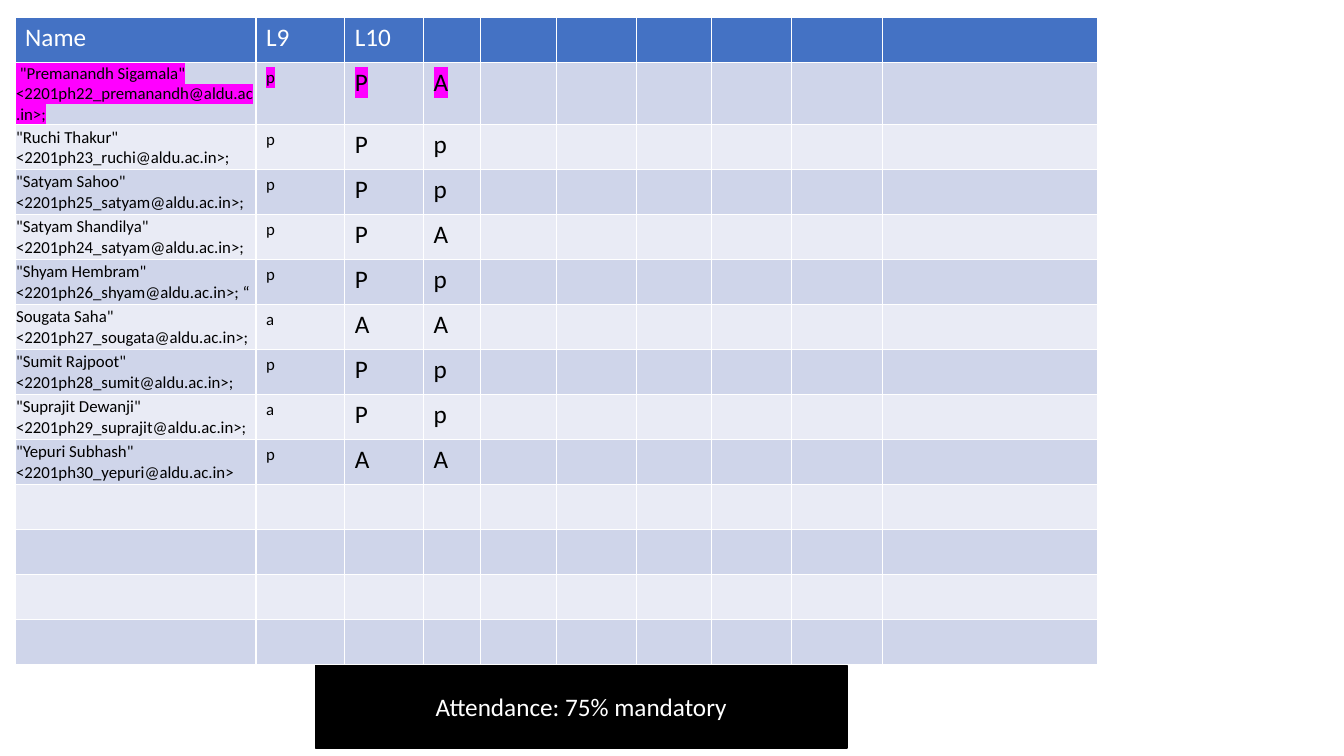
from lxml import etree
from pptx import Presentation
from pptx.dml.color import RGBColor
from pptx.enum.shapes import MSO_SHAPE
from pptx.enum.text import MSO_ANCHOR, PP_ALIGN
from pptx.oxml.ns import qn
from pptx.util import Inches, Pt

HEADINGS = ["Name", "L9", "L10"]
STUDENTS = [
    (' "Premanandh Sigamala" <2201ph22_premanandh@aldu.ac.in>;', "p", "P", "A"),
    ('"Ruchi Thakur" <2201ph23_ruchi@aldu.ac.in>;', "p", "P", "p"),
    ('"Satyam Sahoo" <2201ph25_satyam@aldu.ac.in>;', "p", "P", "p"),
    ('"Satyam Shandilya" <2201ph24_satyam@aldu.ac.in>;', "p", "P", "A"),
    ('"Shyam Hembram" <2201ph26_shyam@aldu.ac.in>; “', "p", "P", "p"),
    ('Sougata Saha" <2201ph27_sougata@aldu.ac.in>;', "a", "A", "A"),
    ('"Sumit Rajpoot" <2201ph28_sumit@aldu.ac.in>;', "p", "P", "p"),
    ('"Suprajit Dewanji" <2201ph29_suprajit@aldu.ac.in>;', "a", "P", "p"),
    ('"Yepuri Subhash" <2201ph30_yepuri@aldu.ac.in>', "p", "A", "A"),
]
HIGHLIGHTED_ROW = 1
EMPTY_ROWS = 4
RULE = "Attendance: 75% mandatory"

COLUMN_WIDTHS = [2.39, 0.88, 0.78, 0.57, 0.75, 0.79, 0.75, 0.79, 0.9, 2.14]
COLUMN_SIZES = [12, 12, 18, 18]
ROWS_HEIGHT = 6.25

FONT = "Calibri"
WHITE = RGBColor(0xFF, 0xFF, 0xFF)
BLACK = RGBColor(0, 0, 0)
HEADER_BLUE = RGBColor(0x44, 0x72, 0xC4)
BAND_DARK = RGBColor(0xCF, 0xD5, 0xEA)
BAND_LIGHT = RGBColor(0xE9, 0xEB, 0xF5)
MAGENTA = RGBColor(0xFF, 0, 0xFF)
RECTANGLE = MSO_SHAPE.RECTANGLE
MIDDLE = MSO_ANCHOR.MIDDLE
CENTER = PP_ALIGN.CENTER


def write(text_frame, text, size=18, color=BLACK, align=None, highlight=None):
    paragraph = text_frame.paragraphs[0]
    paragraph.alignment = align
    run = paragraph.add_run()
    run.text = text
    run.font.size = Pt(size)
    run.font.bold = False
    run.font.color.rgb = color
    if highlight is not None:
        marker = etree.SubElement(run.font._element, qn("a:highlight"))
        etree.SubElement(marker, qn("a:srgbClr"), val=str(highlight))
    run.font.name = FONT


def add_attendance_table(slide):
    rows = [HEADINGS] + STUDENTS + [()] * EMPTY_ROWS
    frame = slide.shapes.add_table(
        len(rows), len(COLUMN_WIDTHS), Inches(0.15), Inches(0.17),
        Inches(sum(COLUMN_WIDTHS)), Inches(ROWS_HEIGHT))
    table = frame.table
    for column, width in zip(table.columns, COLUMN_WIDTHS):
        column.width = Inches(width)
    for row_index, values in enumerate(rows):
        is_header = row_index == 0
        band = BAND_DARK if row_index % 2 else BAND_LIGHT
        highlight = MAGENTA if row_index == HIGHLIGHTED_ROW else None
        for cell in table.rows[row_index].cells:
            cell.fill.solid()
            cell.fill.fore_color.rgb = HEADER_BLUE if is_header else band
        for column_index, text in enumerate(values):
            cell = table.cell(row_index, column_index)
            if column_index == 0 and not is_header:
                cell.vertical_anchor = MIDDLE
                cell.margin_left = cell.margin_right = Inches(0.01)
                cell.margin_top = Inches(0.01)
                cell.margin_bottom = 0
            write(cell.text_frame, text,
                  size=18 if is_header else COLUMN_SIZES[column_index],
                  color=WHITE if is_header else BLACK, highlight=highlight)


def add_rule_box(slide):
    shape = slide.shapes.add_shape(
        RECTANGLE, Inches(3.13), Inches(6.6), Inches(5.27), Inches(0.82))
    shape.shadow.inherit = False
    shape.fill.solid()
    shape.fill.fore_color.rgb = BLACK
    shape.line.color.rgb = BLACK
    shape.line.width = Pt(1)
    shape.text_frame.word_wrap = True
    shape.text_frame.vertical_anchor = MIDDLE
    write(shape.text_frame, RULE, color=WHITE, align=CENTER)


def main():
    presentation = Presentation()
    presentation.slide_width = Inches(13.33)
    presentation.slide_height = Inches(7.5)
    slide = presentation.slides.add_slide(presentation.slide_layouts[6])
    add_attendance_table(slide)
    add_rule_box(slide)
    presentation.save("out.pptx")


if __name__ == "__main__":
    main()
